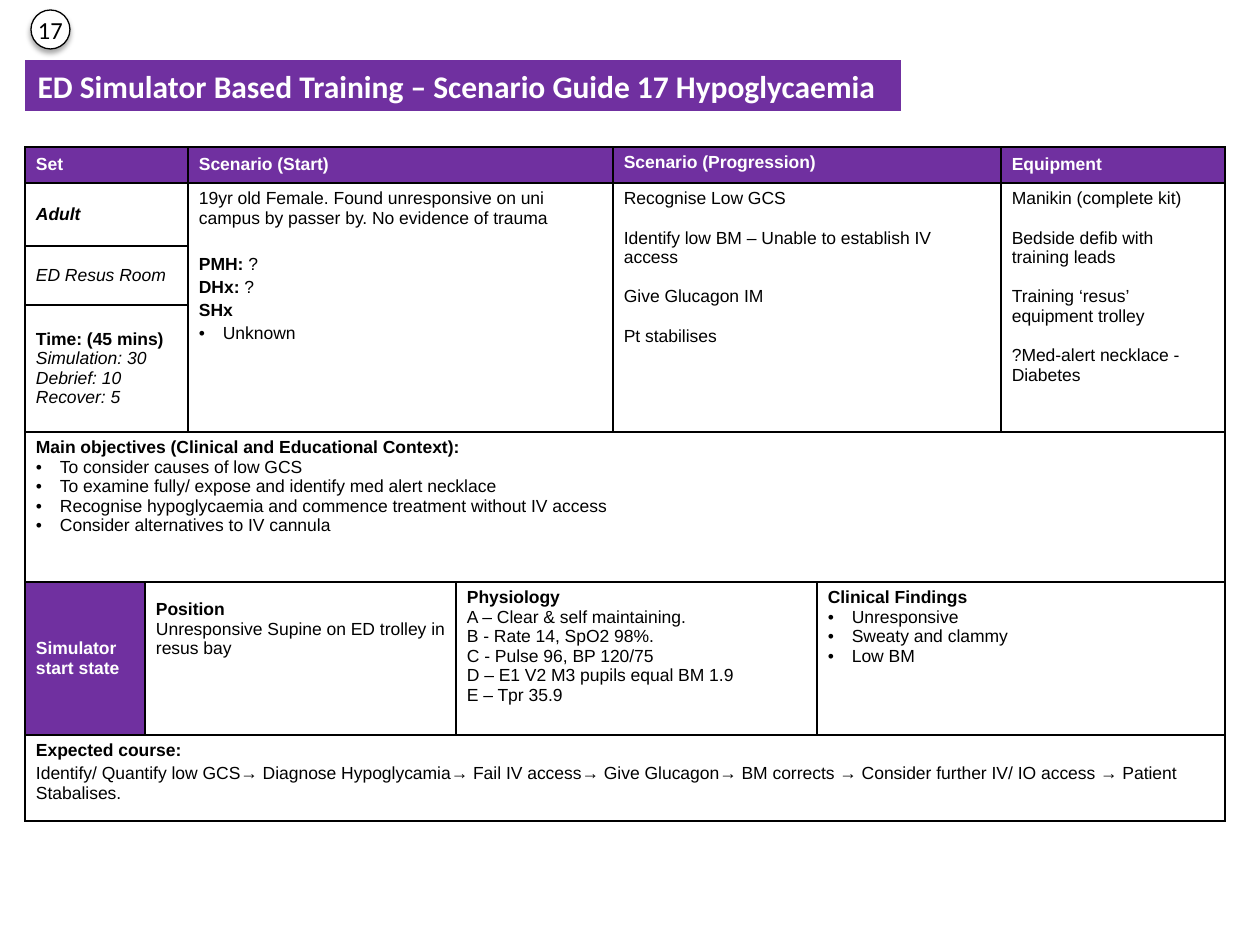
from dataclasses import dataclass

from lxml.etree import SubElement
from pptx import Presentation
from pptx.dml.color import RGBColor
from pptx.enum.shapes import MSO_SHAPE
from pptx.enum.text import MSO_ANCHOR, MSO_AUTO_SIZE, PP_ALIGN
from pptx.oxml.ns import qn
from pptx.util import Emu, Pt

PURPLE, WHITE, BLACK = "7030A0", "FFFFFF", "000000"
TOP, MIDDLE = MSO_ANCHOR.TOP, MSO_ANCHOR.MIDDLE
LINE_GAP = 11.3
SMALL_GAP = 2


def px(length):
    return Emu(round(length * 914400 / 126))


def color(value):
    return RGBColor.from_string(value)


@dataclass
class Line:
    text: str
    label: str = ""
    bold: bool = False
    italic: bool = False
    bullet: bool = False
    before: float = 0


def heading(text, before=0):
    return Line(text, bold=True, before=before)


def bullets(*texts, before=0):
    return [Line(text, bullet=True, before=before) for text in texts]


def spaced(*texts):
    return [Line(text, before=LINE_GAP if index else 0) for index, text in enumerate(texts)]


class GuideSlide:
    """Builds the scenario guide slide in one consistent style."""

    def __init__(self, deck):
        self.page = deck.slides.add_slide(deck.slide_layouts[5])
        self.heading_font = "Calibri"
        self.body_font = "Arial"
        self.body_size = 10

    def style(self, font, name, size, ink, bold=False, italic=False):
        font.name, font.size = name, Pt(size)
        font.bold, font.italic = bold, italic
        font.color.rgb = color(ink)

    def title(self, text, left, top, width, height):
        box = self.page.shapes.title
        box.left, box.top, box.width, box.height = map(px, (left, top, width, height))
        box.fill.solid()
        box.fill.fore_color.rgb = color(PURPLE)
        frame = box.text_frame
        frame.text = text
        frame.auto_size = MSO_AUTO_SIZE.NONE
        frame.vertical_anchor = MIDDLE
        para = frame.paragraphs[0]
        para.alignment = PP_ALIGN.LEFT
        self.style(para.font, self.heading_font, 18, WHITE, bold=True)

    def badge(self, text, left, top, size):
        box = self.page.shapes.add_shape(MSO_SHAPE.OVAL, px(left), px(top), px(size), px(size))
        box.fill.solid()
        box.fill.fore_color.rgb = color(WHITE)
        box.line.color.rgb = color(BLACK)
        box.line.width = Pt(0.75)
        box.shadow.inherit = False
        effects = box._element.spPr.find(qn("a:effectLst"))
        shadow = SubElement(effects, qn("a:outerShdw"), blurRad=str(Pt(3.1)), dist=str(Pt(1.8)),
                            dir="5400000", rotWithShape="0")
        shade = SubElement(shadow, qn("a:srgbClr"), val=BLACK)
        SubElement(shade, qn("a:alpha"), val="35000")
        frame = box.text_frame
        frame.margin_left = frame.margin_right = frame.margin_top = frame.margin_bottom = 0
        frame.word_wrap = False
        frame.vertical_anchor = MIDDLE
        frame.text = text
        para = frame.paragraphs[0]
        para.alignment = PP_ALIGN.CENTER
        self.style(para.font, self.heading_font, 14, BLACK)

    def table(self, left, top, widths, heights):
        frame = self.page.shapes.add_table(len(heights), len(widths), px(left), px(top),
                                           px(sum(widths)), px(sum(heights)))
        self.grid = frame.table
        self.grid.first_row = self.grid.horz_banding = False
        for column, width in zip(self.grid.columns, widths):
            column.width = px(width)
        for row, height in zip(self.grid.rows, heights):
            row.height = px(height)
        for cell in self.grid.iter_cells():
            self.border(cell)

    def border(self, cell):
        properties = cell._tc.get_or_add_tcPr()
        for side in ("lnL", "lnR", "lnT", "lnB"):
            edge = SubElement(properties, qn(f"a:{side}"), w=str(Pt(1)))
            SubElement(SubElement(edge, qn("a:solidFill")), qn("a:srgbClr"), val=BLACK)

    def cell(self, row, column, rows, columns, lines, anchor=TOP, fill=WHITE, margin_top=6):
        cell = self.grid.cell(row, column)
        if rows * columns > 1:
            cell.merge(self.grid.cell(row + rows - 1, column + columns - 1))
        cell.fill.solid()
        cell.fill.fore_color.rgb = color(fill)
        cell.vertical_anchor = anchor
        cell.margin_left = cell.margin_right = px(11)
        cell.margin_top, cell.margin_bottom = px(margin_top), px(6)
        ink = WHITE if fill == PURPLE else BLACK
        frame = cell.text_frame
        for index, line in enumerate(lines):
            para = frame.add_paragraph() if index else frame.paragraphs[0]
            self.line(para, line, ink)

    def line(self, para, line, ink):
        if line.bullet:
            properties = para._p.get_or_add_pPr()
            properties.set("marL", str(px(24)))
            properties.set("indent", str(-px(24)))
            SubElement(properties, qn("a:buFont"), typeface=self.body_font)
            SubElement(properties, qn("a:buChar"), char="•")
        if line.before:
            para.space_before = Pt(line.before)
        self.style(para.font, self.body_font, self.body_size, ink, line.bold, line.italic)
        if line.label:
            span = para.add_run()
            span.text = line.label
            self.style(span.font, self.body_font, self.body_size, ink, bold=True)
        span = para.add_run()
        span.text = line.text
        if line.label:
            self.style(span.font, self.body_font, self.body_size, ink)


def main():
    deck = Presentation()
    deck.slide_width, deck.slide_height = px(1260), px(945)
    guide = GuideSlide(deck)
    guide.title("ED Simulator Based Training – Scenario Guide 17 Hypoglycaemia", 25, 60, 876, 51)
    guide.table(25, 147, [120, 43, 268, 157, 204, 184, 224], [36, 63, 59, 127, 150, 153, 86])

    headers = [("Set", 0, 2, MIDDLE), ("Scenario (Start)", 2, 2, MIDDLE),
               ("Scenario (Progression)", 4, 2, TOP), ("Equipment", 6, 1, MIDDLE)]
    for text, column, columns, anchor in headers:
        guide.cell(0, column, 1, columns, [heading(text)], anchor, PURPLE)

    guide.cell(1, 0, 1, 2, [Line("Adult", bold=True, italic=True)], MIDDLE)
    guide.cell(2, 0, 1, 2, [Line("ED Resus Room", italic=True)], MIDDLE)
    guide.cell(3, 0, 1, 2, [heading("Time: (45 mins)"),
                            Line("Simulation: 30 Debrief: 10", italic=True),
                            Line("Recover: 5", italic=True)], MIDDLE)
    guide.cell(1, 2, 3, 2, [
        Line("19yr old Female. Found unresponsive on uni campus by passer by. No evidence of trauma"),
        Line("?", label="PMH: ", before=LINE_GAP + 2 * SMALL_GAP),
        Line("?", label="DHx: ", before=SMALL_GAP),
        heading("SHx", SMALL_GAP),
        *bullets("Unknown", before=SMALL_GAP)])
    guide.cell(1, 4, 3, 2, spaced("Recognise Low GCS",
                                  "Identify low BM – Unable to establish IV access",
                                  "Give Glucagon IM", "Pt stabilises"))
    guide.cell(1, 6, 3, 1, spaced("Manikin (complete kit)", "Bedside defib with training leads",
                                  "Training ‘resus’ equipment trolley",
                                  "?Med-alert necklace - Diabetes"))
    guide.cell(4, 0, 1, 7, [
        heading("Main objectives (Clinical and Educational Context):"),
        *bullets("To consider causes of low GCS",
                 "To examine fully/ expose and identify med alert necklace",
                 "Recognise hypoglycaemia and commence treatment without IV access",
                 "Consider alternatives to IV cannula")])
    guide.cell(5, 0, 1, 1, [heading("Simulator"), heading("start state")], MIDDLE, PURPLE)
    guide.cell(5, 1, 1, 2, [heading("Position"),
                            Line("Unresponsive Supine on ED trolley in resus bay")], margin_top=18)
    guide.cell(5, 3, 1, 2, [heading("Physiology"), Line("A – Clear & self maintaining."),
                            Line("B - Rate 14, SpO2 98%."), Line("C - Pulse 96, BP 120/75"),
                            Line("D – E1 V2 M3 pupils equal BM 1.9"), Line("E – Tpr 35.9")])
    guide.cell(5, 5, 1, 2, [heading("Clinical Findings"),
                            *bullets("Unresponsive", "Sweaty and clammy", "Low BM")])
    guide.cell(6, 0, 1, 7, [
        heading("Expected course:"),
        Line("Identify/ Quantify low GCS→ Diagnose Hypoglycamia→ Fail IV access→ Give Glucagon→ "
             "BM corrects → Consider further IV/ IO access → Patient Stabalises.",
             before=SMALL_GAP)])

    guide.badge("17", 31, 10, 39)
    deck.save("out.pptx")


if __name__ == "__main__":
    main()
